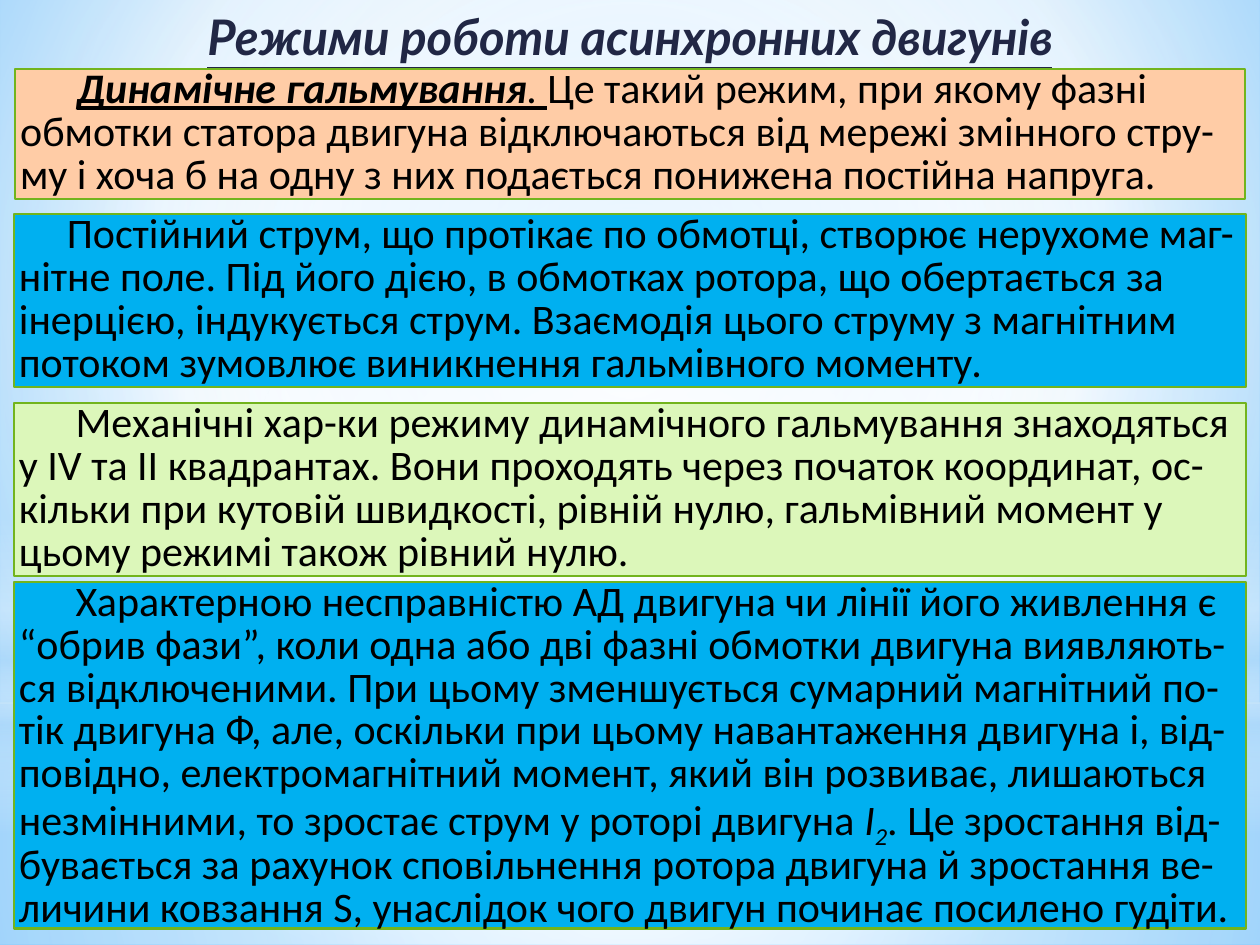
from dataclasses import dataclass

from lxml import etree
from pptx import Presentation
from pptx.dml.color import RGBColor as RGB
from pptx.enum.shapes import MSO_SHAPE as Kind
from pptx.enum.text import MSO_ANCHOR as Anchor, PP_ALIGN as Align
from pptx.oxml import parse_xml
from pptx.oxml.ns import nsdecls, qn
from pptx.util import Inches, Pt


@dataclass(frozen=True)
class Theme:
    head: str = "Lato"
    body: str = "Calibri"
    big: int = 28
    text: int = 24
    navy: str = "212745"
    ink: str = "000000"
    edge: str = "72B41D"
    peach: str = "FFCCA6"
    blue: str = "00B0F0"
    lime: str = "DCF7BA"
    white: str = "FFFFFF"
    haze: str = "B4DCFA"
    sky: str = "9ED5FF"
    deep: str = "5BB9FF"


def blend(stops, focus=None):
    grad = parse_xml(f'<a:gradFill {nsdecls("a")} rotWithShape="1"><a:gsLst/></a:gradFill>')
    for pos, color, alpha in stops:
        stop = etree.SubElement(grad[0], qn("a:gs"), pos=str(pos * 1000))
        tint = etree.SubElement(stop, qn("a:srgbClr"), val=color)
        if alpha < 100:
            etree.SubElement(tint, qn("a:alpha"), val=str(alpha * 1000))
    if focus:
        route = etree.SubElement(grad, qn("a:path"))
        route.set("path", "circle")
        sides = {side: str(part * 1000) for side, part in zip("ltrb", focus)}
        etree.SubElement(route, qn("a:fillToRect"), **sides)
    else:
        etree.SubElement(grad, qn("a:lin"), ang="5400000", scaled="0")
    return grad


class Deck:
    def __init__(self, theme):
        self.theme = theme
        self.show = Presentation()
        self.show.slide_width = Inches(10)
        self.show.slide_height = Inches(7.5)
        self.slide = self.show.slides.add_slide(self.show.slide_layouts[5])

    def ground(self, stops, focus):
        fill = self.slide.background.fill
        fill.gradient()
        old = self.slide.element.find(f".//{qn('p:bgPr')}/{qn('a:gradFill')}")
        old.getparent().replace(old, blend(stops, focus))

    def shape(self, kind, box):
        shape = self.slide.shapes.add_shape(kind, *map(Inches, box))
        shape.shadow.inherit = False
        return shape

    def glow(self, kind, top, high, stops, focus=None):
        shape = self.shape(kind, (0, top, 10, high))
        shape.line.fill.background()
        shape.fill.gradient()
        old = shape._element.spPr.find(qn("a:gradFill"))
        old.getparent().replace(old, blend(stops, focus))

    def font(self, run, face, size, color, marks=""):
        font = run.font
        font.name, font.size = face, Pt(size)
        font.color.rgb = RGB.from_string(color)
        font.bold, font.italic = "b" in marks, "i" in marks
        font.underline = "u" in marks
        if "s" in marks:
            run._r.get_or_add_rPr().set("baseline", "-25000")

    def frame(self, shape, side, edge, anchor):
        frame = shape.text_frame
        frame.word_wrap = True
        frame.margin_left = frame.margin_right = Inches(side)
        frame.margin_top = frame.margin_bottom = Inches(edge)
        frame.vertical_anchor = anchor
        return frame

    def title(self, text, box):
        title = self.slide.shapes.title
        title.left, title.top, title.width, title.height = map(Inches, box)
        self.slide.shapes._spTree.append(title._element)
        frame = self.frame(title, 0, 0.05, Anchor.MIDDLE)
        frame.text = text
        para = frame.paragraphs[0]
        para.alignment = Align.CENTER
        look = self.theme
        self.font(para.runs[0], look.head, look.big, look.navy, "biu")

    def card(self, box, color, indent, parts):
        look = self.theme
        shape = self.shape(Kind.RECTANGLE, box)
        shape.fill.solid()
        shape.fill.fore_color.rgb = RGB.from_string(color)
        shape.line.color.rgb = RGB.from_string(look.edge)
        shape.line.width = Pt(1.25)
        para = self.frame(shape, 0.04, 0, Anchor.TOP).paragraphs[0]
        para.alignment = Align.LEFT
        para.line_spacing = 0.85
        para._p.get_or_add_pPr().set("indent", str(Inches(indent)))
        for text, marks in parts:
            run = para.add_run()
            run.text = text
            self.font(run, look.body, look.text, look.ink, marks)


def main():
    look = Theme()
    deck = Deck(look)
    white, haze = look.white, look.haze
    mid = (50, 50, 50, 50)
    deck.ground([(0, look.sky, 100), (60, white, 100), (100, look.deep, 100)],
                (20, 10, 20, 60))
    deck.glow(Kind.RECTANGLE, 5.58, 1.92,
              [(0, white, 91), (37, white, 76), (100, haze, 79)], mid)
    deck.glow(Kind.RECTANGLE, 0, 5.58,
              [(0, white, 89), (48, white, 62), (100, haze, 79)], mid)
    deck.glow(Kind.RECTANGLE, 4.12, 2.5,
              [(0, white, 0), (29, white, 30), (45, haze, 40),
               (55, white, 26), (65, haze, 60), (100, white, 0)])
    deck.glow(Kind.OVAL, 1.75, 5.58, [(0, white, 100), (56, white, 0)], mid)

    deck.title("Режими роботи асинхронних двигунів", (0.12, 0, 9.76, 0.57))
    deck.card((0.12, 0.55, 9.76, 1.03), look.peach, 0.45, [
        ("Динамічне гальмування", "biu"),
        (".", "iu"),
        (" ", "u"),
        ("Це такий режим, при якому фазні обмотки статора двигуна "
         "відключаються від мережі змінного стру-му і хоча б на одну з них "
         "подається понижена постійна напруга.", ""),
    ])
    deck.card((0.11, 1.7, 9.78, 1.37), look.blue, 0.38, [
        ("Постійний струм, що протікає по обмотці, створює нерухоме "
         "маг-нітне поле. Під його дією, в обмотках ротора, що обертається за "
         "інерцією, індукується струм. Взаємодія цього струму з магнітним "
         "потоком зумовлює виникнення гальмівного моменту.", ""),
    ])
    deck.card((0.11, 3.2, 9.78, 1.37), look.lime, 0.45, [
        ("Механічні хар-ки режиму динамічного гальмування знаходяться у ІV та "
         "ІІ квадрантах. Вони проходять через початок координат, ос-кільки при "
         "кутовій швидкості, рівній нулю, гальмівний момент у цьому режимі "
         "також рівний нулю.", ""),
    ])
    deck.card((0.11, 4.62, 9.78, 2.75), look.blue, 0.45, [
        ("Характерною несправністю АД двигуна чи лінії його живлення є “обрив "
         "фази”, коли одна або дві фазні обмотки двигуна виявляють-ся "
         "відключеними. При цьому зменшується сумарний магнітний по-тік "
         "двигуна Ф, але, оскільки при цьому навантаження двигуна і, "
         "від-повідно, електромагнітний момент, який він розвиває, лишаються "
         "незмінними, то зростає струм у роторі двигуна ", ""),
        ("І", "i"),
        ("2", "is"),
        (". Це зростання від-бувається за рахунок сповільнення ротора двигуна "
         "й зростання ве-личини ковзання S, унаслідок чого двигун починає "
         "посилено гудіти.", ""),
    ])
    deck.show.save("out.pptx")


if __name__ == "__main__":
    main()
